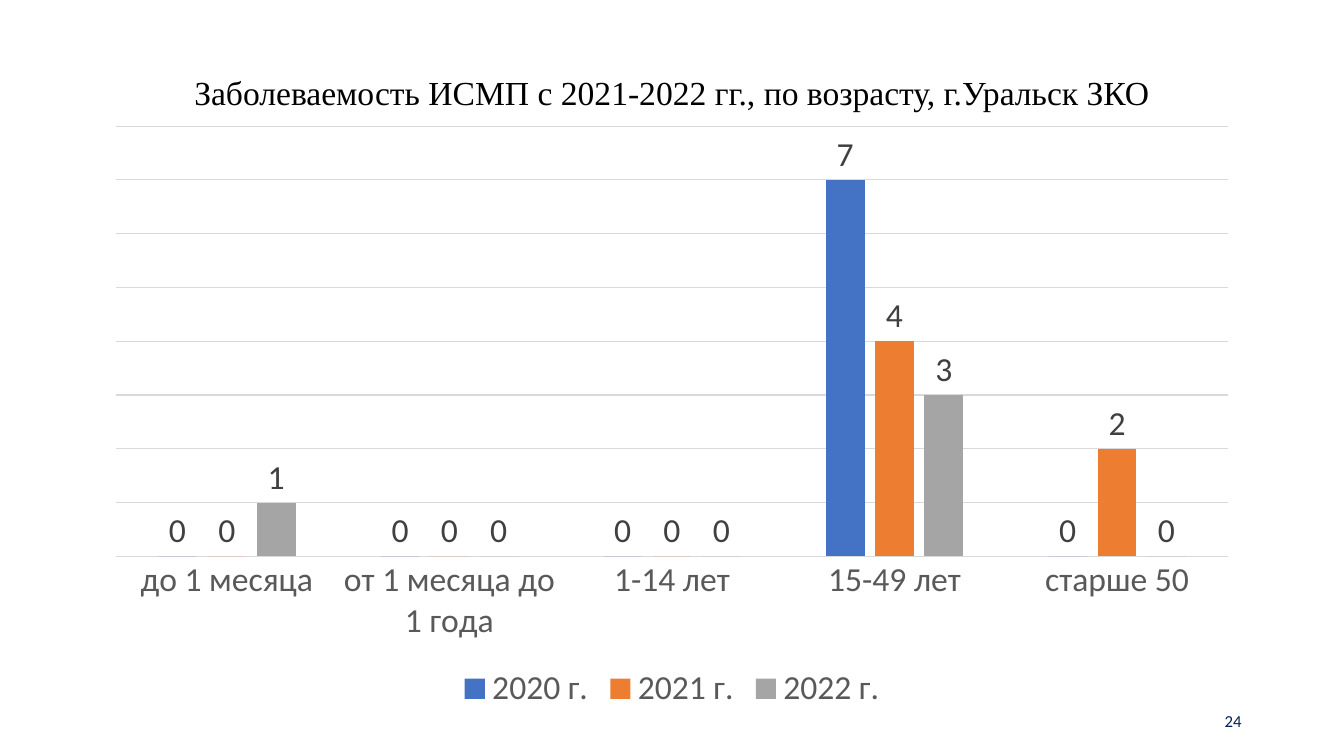
from pptx import Presentation
from pptx.chart.data import CategoryChartData
from pptx.dml.color import RGBColor
from pptx.enum import chart as ch, text
from pptx.util import Pt

COLORS = {
    "title": "000000", "number": "002060", "axis": "595959",
    "label": "404040", "grid": "D9D9D9",
    "2020 г.": "4472C4", "2021 г.": "ED7D31", "2022 г.": "A5A5A5",
}
CASES = {
    "2020 г.": (0, 0, 0, 7, 0),
    "2021 г.": (0, 0, 0, 4, 2),
    "2022 г.": (1, 0, 0, 3, 0),
}
AGES = ["до 1 месяца", "от 1 месяца до 1 года", "1-14 лет", "15-49 лет", "старше 50"]


def style_font(font, size, color, name="Calibri"):
    font.size = Pt(size)
    font.name = name
    font.bold = False
    font.color.rgb = RGBColor.from_string(COLORS[color])


def style_line(line):
    line.color.rgb = RGBColor.from_string(COLORS["grid"])
    line.width = Pt(0.75)


prs = Presentation()
prs.slide_width, prs.slide_height = Pt(960), Pt(540)
slide = prs.slides.add_slide(prs.slide_layouts[5])

title = slide.shapes.title
title.left, title.top, title.width, title.height = Pt(66), Pt(28.75), Pt(828), Pt(77)
page_number = slide.shapes.add_textbox(Pt(678), Pt(500.5), Pt(216), Pt(28.75))

for box, wording, align, size, color, face in (
    (title, "Заболеваемость ИСМП с 2021-2022 гг., по возрасту, г.Уральск ЗКО",
     text.PP_ALIGN.CENTER, 24, "title", "Times New Roman"),
    (page_number, "24", text.PP_ALIGN.RIGHT, 12, "number", "Calibri"),
):
    frame = box.text_frame
    frame.word_wrap = True
    frame.auto_size = text.MSO_AUTO_SIZE.NONE
    frame.vertical_anchor = text.MSO_ANCHOR.MIDDLE
    paragraph = frame.paragraphs[0]
    paragraph.alignment = align
    run = paragraph.add_run()
    run.text = wording
    style_font(run.font, size, color, face)
title.text_frame.paragraphs[0].line_spacing = 0.9

case_data = CategoryChartData()
case_data.categories = AGES
for year, counts in CASES.items():
    case_data.add_series(year, counts)
incidence = slide.shapes.add_chart(
    ch.XL_CHART_TYPE.COLUMN_CLUSTERED,
    Pt(66), Pt(81.5), Pt(828), Pt(430), case_data).chart
incidence.has_title = False
style_font(incidence.font, 24, "title")

incidence.has_legend = True
incidence.legend.position = ch.XL_LEGEND_POSITION.BOTTOM
incidence.legend.include_in_layout = False
style_font(incidence.legend.font, 24, "axis")

age_axis = incidence.category_axis
age_axis.major_tick_mark = ch.XL_TICK_MARK.NONE
style_font(age_axis.tick_labels.font, 24, "axis")
style_line(age_axis.format.line)

case_axis = incidence.value_axis
case_axis.visible = False
case_axis.minimum_scale, case_axis.maximum_scale, case_axis.major_unit = 0, 8, 1
case_axis.has_major_gridlines = True
style_line(case_axis.major_gridlines.format.line)

columns = incidence.plots[0]
columns.gap_width, columns.overlap = 219, -27
columns.vary_by_categories = False
for year in columns.series:
    year.invert_if_negative = False
    year.format.fill.solid()
    year.format.fill.fore_color.rgb = RGBColor.from_string(COLORS[year.name])
    labels = year.data_labels
    labels.show_value = True
    labels.position = ch.XL_LABEL_POSITION.OUTSIDE_END
    style_font(labels.font, 24, "label")

prs.save("out.pptx")
